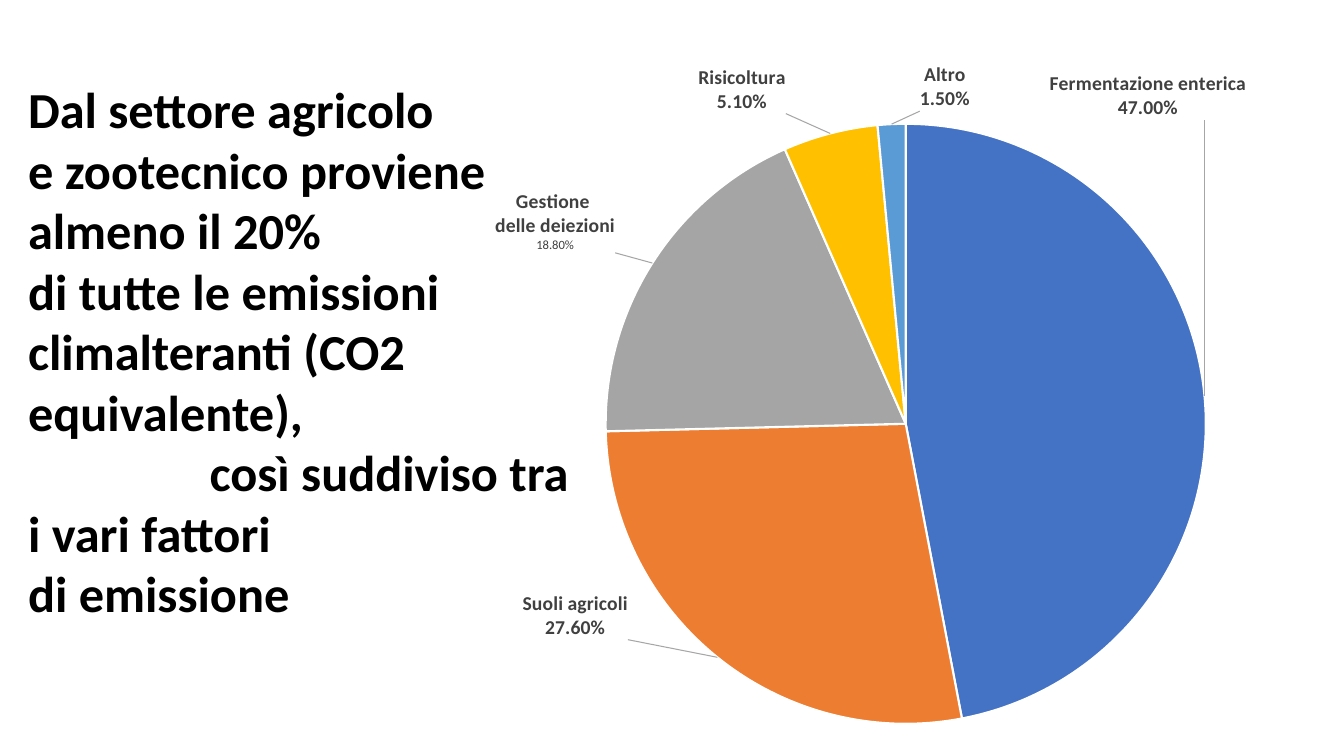
import pptx
import pptx.chart.data
import pptx.dml.color
import pptx.enum.chart
import pptx.enum.text
import pptx.oxml
import pptx.util
from pptx.util import Inches

FONT = "Calibri"
CHART_NS = (
    'xmlns:c="http://schemas.openxmlformats.org/drawingml/2006/chart" '
    'xmlns:a="http://schemas.openxmlformats.org/drawingml/2006/main"'
)

# Message lines with their left indent in inches
MESSAGE = [
    ("Dal settore agricolo", 0),
    ("e zootecnico proviene almeno il 20%", 0),
    ("di tutte le emissioni climalteranti (CO2 equivalente),", 0),
    ("così suddiviso tra", 1.8),
    ("i vari fattori", 0),
    ("di emissione", 0),
]

# Value, slice colour, label lines, label shift as a share of the chart size
EMISSIONS = [
    (0.47, "4472C4", ["Fermentazione enterica", "47.00%"], (-0.15, -0.39)),
    (0.276, "ED7D31", ["Suoli agricoli", "27.60%"], (-0.08, -0.1)),
    (0.188, "A5A5A5", ["Gestione ", "delle deiezioni", "18.80%"], (-0.03, -0.01)),
    (0.051, "FFC000", ["Risicoltura", "5.10%"], (-0.04, -0.02)),
    (0.015, "5B9BD5", ["Altro", "1.50%"], (0.05, -0.01)),
]

LABEL_BOLD = {"size": pptx.util.Pt(14), "bold": True}
LABEL_SMALL = {"size": pptx.util.Pt(9), "bold": False}


def color(hex_string):
    return pptx.dml.color.RGBColor.from_string(hex_string)


def set_values(target, values):
    for name, value in values.items():
        setattr(target, name, value)


def set_font(font, hex_string, values):
    set_values(font, {"name": FONT, **values})
    font.color.rgb = color(hex_string)


def chart_xml(body):
    """Parse a chart element, given without its namespaces."""
    tag, rest = body.split(">", 1)
    return pptx.oxml.parse_xml(f"{tag} {CHART_NS}>{rest}")


def manual_layout(**places):
    parts = "".join(f'<c:{name} val="{value}"/>' for name, value in places.items())
    return chart_xml(f"<c:layout><c:manualLayout>{parts}</c:manualLayout></c:layout>")


def add_message(page):
    box = page.shapes.add_textbox(Inches(0.18), Inches(0.7), Inches(6.37), Inches(5.86))
    frame = box.text_frame
    set_values(frame, {
        "word_wrap": True,
        "auto_size": pptx.enum.text.MSO_AUTO_SIZE.SHAPE_TO_FIT_TEXT,
        "vertical_anchor": pptx.enum.text.MSO_ANCHOR.MIDDLE,
        "margin_bottom": Inches(0.35),
    })
    for index, (line, indent) in enumerate(MESSAGE):
        para = frame.paragraphs[0] if index == 0 else frame.add_paragraph()
        if indent:
            para._p.get_or_add_pPr().set("indent", str(Inches(indent)))
        span = para.add_run()
        span.text = line
        set_font(span.font, "000000", {"size": pptx.util.Pt(36), "bold": True})


def format_label(label, lines, shift):
    frame = label.text_frame
    for index, line in enumerate(lines):
        para = frame.paragraphs[0] if index == 0 else frame.add_paragraph()
        span = para.add_run()
        span.text = line
        set_font(span.font, "404040", LABEL_SMALL if index == 2 else LABEL_BOLD)
    label.position = pptx.enum.chart.XL_LABEL_POSITION.OUTSIDE_END
    element = label._get_or_add_dLbl()
    element.insert(1, manual_layout(x=shift[0], y=shift[1]))


def add_leader_lines(labels):
    lines = chart_xml(
        '<c:leaderLines><c:spPr><a:ln w="9525"><a:solidFill>'
        '<a:srgbClr val="A6A6A6"/></a:solidFill></a:ln></c:spPr></c:leaderLines>'
    )
    element = labels._element
    for old in element.xpath("c:showLeaderLines"):
        element.remove(old)
    element.append(chart_xml('<c:showLeaderLines val="1"></c:showLeaderLines>'))
    element.append(lines)


def add_emissions_pie(page):
    data = pptx.chart.data.CategoryChartData(number_format="0.00%")
    data.categories = [str(number + 1) for number in range(len(EMISSIONS))]
    data.add_series("Series 1", [emission[0] for emission in EMISSIONS])
    chart = page.shapes.add_chart(
        pptx.enum.chart.XL_CHART_TYPE.PIE,
        Inches(4.2), Inches(0.49), Inches(10.63), Inches(7.01), data,
    ).chart
    set_values(chart, {"has_title": False, "has_legend": False})
    set_font(chart.font, "000000", {"size": pptx.util.Pt(10)})
    plot = chart.plots[0]
    plot.vary_by_categories = True
    series = plot.series[0]

    # Common label format
    labels = series.data_labels
    set_values(labels, {
        "show_value": True,
        "number_format": "0.00%",
        "number_format_is_linked": False,
        "position": pptx.enum.chart.XL_LABEL_POSITION.OUTSIDE_END,
    })
    set_font(labels.font, "404040", {"size": pptx.util.Pt(9)})
    add_leader_lines(labels)

    # Slices and their labels
    for index, (_, fill, lines, shift) in enumerate(EMISSIONS):
        point = series.points[index]
        point.format.fill.solid()
        point.format.fill.fore_color.rgb = color(fill)
        point.format.line.color.rgb = color("FFFFFF")
        point.format.line.width = pptx.util.Pt(1.5)
        format_label(point.data_label, lines, shift)

    # Place of the pie inside the chart
    area = chart._chartSpace.xpath("c:chart/c:plotArea")[0]
    for old in area.xpath("c:layout"):
        area.remove(old)
    area.insert(0, manual_layout(
        layoutTarget="inner", xMode="edge", yMode="edge", x=0.17, y=0.1, w=0.56, h=0.86,
    ))


def main():
    deck = pptx.Presentation()
    set_values(deck, {"slide_width": Inches(13.33), "slide_height": Inches(7.5)})
    page = deck.slides.add_slide(deck.slide_layouts[6])
    add_message(page)
    add_emissions_pie(page)
    deck.save("out.pptx")


if __name__ == "__main__":
    main()
